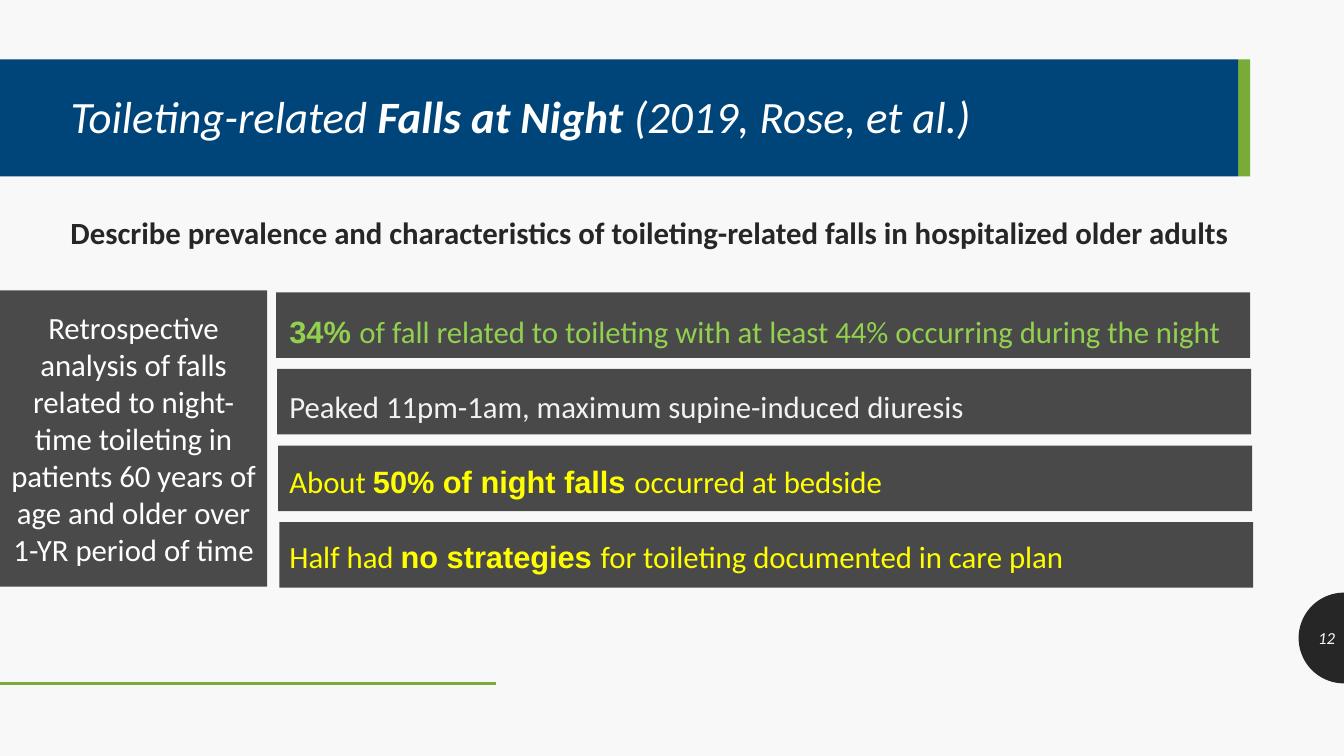
"""Build the slide on toileting-related falls at night."""
import math
from dataclasses import dataclass

from lxml import etree
from pptx import Presentation
from pptx.dml.color import RGBColor
from pptx.enum import shapes, text
from pptx.oxml import ns
from pptx.util import Inches, Pt

NAVY, GREEN, CHARCOAL, PALE, WHITE = "004579", "78AC36", "262626", "F8F8F8", "FFFFFF"
LIME, LIGHT, YELLOW = "92D050", "F2F2F2", "FFFF00"


@dataclass(frozen=True)
class Span:
    words: str
    strong: bool = False


@dataclass(frozen=True)
class Finding:
    color: str
    spans: tuple[Span, ...]


@dataclass(frozen=True)
class Block:
    left: float
    top: float
    width: float
    height: float
    color: str
    alpha: int = 100


BANNER = Block(0, 0.59, 12.28, 1.16, NAVY)
ACCENT = Block(12.28, 0.59, 0.12, 1.16, GREEN)
METHOD = Block(0, 2.88, 2.65, 2.94, "4A4A4A")
TITLE = (Span("Toileting-related "), Span("Falls at Night ", True),
         Span("(2019, Rose, et al.)"))
FINDINGS = (
    Finding(LIME, (Span("34% ", True),
                   Span("of fall related to toileting with at least 44% "
                        "occurring during the night"))),
    Finding(LIGHT, (Span("Peaked 11pm-1am, maximum supine-induced diuresis"),)),
    Finding(YELLOW, (Span("About "), Span("50% of night falls ", True),
                     Span("occurred at bedside"))),
    Finding(YELLOW, (Span("Half had "), Span("no strategies ", True),
                     Span("for toileting documented in care plan"))),
)


def rgb(color: str) -> RGBColor:
    return RGBColor.from_string(color)


def paint(shape, color: str, alpha: int = 100) -> None:
    shape.shadow.inherit = False
    shape.fill.solid()
    shape.fill.fore_color.rgb = rgb(color)
    shape.line.fill.background()
    if alpha < 100:
        tint = shape.element.spPr.find(f".//{ns.qn('a:srgbClr')}")
        etree.SubElement(tint, ns.qn("a:alpha"), val=str(alpha * 1000))


def add_block(slide, block: Block):
    shape = slide.shapes.add_shape(
        shapes.MSO_SHAPE.RECTANGLE, Inches(block.left), Inches(block.top),
        Inches(block.width), Inches(block.height))
    paint(shape, block.color, block.alpha)
    return shape


def add_badge(slide, center_x: float, center_y: float, radius: float) -> None:
    steps = 48
    angles = [math.pi * (0.5 + step / steps) for step in range(steps + 1)]
    rim = [(Inches(center_x + radius * math.cos(a)),
            Inches(center_y + radius * math.sin(a))) for a in angles]
    outline = slide.shapes.build_freeform(*rim[0])
    outline.add_line_segments(rim[1:], close=True)
    paint(outline.convert_to_shape(), CHARCOAL)


def add_rule(slide, y: float, width: float) -> None:
    rule = slide.shapes.add_connector(
        shapes.MSO_CONNECTOR.STRAIGHT, 0, Inches(y), Inches(width), Inches(y))
    rule.line.color.rgb = rgb(GREEN)
    rule.line.width = Pt(2)
    etree.SubElement(rule.element.spPr, ns.qn("a:effectLst"))


def place(holder, left: float, top: float, width: float, height: float) -> None:
    holder.left, holder.top = Inches(left), Inches(top)
    holder.width, holder.height = Inches(width), Inches(height)


def prepare(frame, anchor) -> None:
    frame.word_wrap = True
    frame.auto_size = text.MSO_AUTO_SIZE.NONE
    frame.vertical_anchor = anchor


def write(paragraph, spans: tuple[Span, ...], size: float, color: str,
          align=text.PP_ALIGN.LEFT, spacing: float = 1.0,
          strong_font: str = "Calibri") -> None:
    paragraph.alignment = align
    paragraph.line_spacing = spacing
    paragraph.space_before = Pt(0)
    font = paragraph.font
    font.name, font.size, font.color.rgb = "Calibri", Pt(size), rgb(color)
    for span in spans:
        run = paragraph.add_run()
        run.text = span.words
        if span.strong:
            run.font.bold = True
            run.font.name = strong_font


def add_label(slide, left: float, top: float, width: float, height: float, anchor):
    box = slide.shapes.add_textbox(
        Inches(left), Inches(top), Inches(width), Inches(height))
    prepare(box.text_frame, anchor)
    return box.text_frame.paragraphs[0]


def fill_findings(body) -> None:
    place(body, 2.77, 3.01, 9.64, 2.93)
    frame = body.text_frame
    prepare(frame, text.MSO_ANCHOR.TOP)
    for index, finding in enumerate(FINDINGS):
        paragraph = frame.add_paragraph() if index else frame.paragraphs[0]
        properties = paragraph._p.get_or_add_pPr()
        properties.set("marL", "0")
        properties.set("indent", "0")
        etree.SubElement(properties, ns.qn("a:buNone"))
        write(paragraph, finding.spans, 22, finding.color, spacing=1.12,
              strong_font="Arial")
        if index:
            paragraph.space_before = Pt(24)


def main() -> None:
    deck = Presentation()
    deck.slide_width, deck.slide_height = Inches(13.33), Inches(7.5)
    slide = deck.slides.add_slide(deck.slide_layouts[1])
    slide.background.fill.solid()
    slide.background.fill.fore_color.rgb = rgb(PALE)
    title, body = slide.shapes.title, slide.placeholders[1]

    add_badge(slide, 13.33, 6.33, 0.45)
    add_rule(slide, 6.78, 4.92)
    add_block(slide, ACCENT)
    add_block(slide, BANNER)
    for row in range(len(FINDINGS)):
        add_block(slide, Block(2.74 + 0.01 * row, 2.9 + 0.76 * row,
                               9.66, 0.65, "000000", 70))

    method = add_block(slide, METHOD).text_frame
    prepare(method, text.MSO_ANCHOR.MIDDLE)
    write(method.paragraphs[0],
          (Span("Retrospective analysis of falls related to night-time toileting in "
                "patients 60 years of age and older over 1-YR period of time"),),
          22, WHITE, text.PP_ALIGN.CENTER)

    aim = add_label(slide, 0.6, 2.03, 11.81, 0.54, text.MSO_ANCHOR.TOP)
    write(aim, (Span("Describe prevalence and characteristics of toileting-related "
                     "falls in hospitalized older adults"),), 22, CHARCOAL, spacing=1.12)
    aim.font.bold = True

    page = add_label(slide, 12.89, 6.13, 0.45, 0.4, text.MSO_ANCHOR.MIDDLE)
    write(page, (Span("12"),), 12, PALE, text.PP_ALIGN.RIGHT)
    page.font.italic = True

    place(title, 0.6, 0.61, 10.93, 1.14)
    prepare(title.text_frame, text.MSO_ANCHOR.MIDDLE)
    heading = title.text_frame.paragraphs[0]
    write(heading, TITLE, 32, WHITE, spacing=0.9)
    heading.font.italic = True
    fill_findings(body)
    for holder in (title, body):
        slide.shapes.element.append(holder.element)

    deck.save("out.pptx")


if __name__ == "__main__":
    main()
